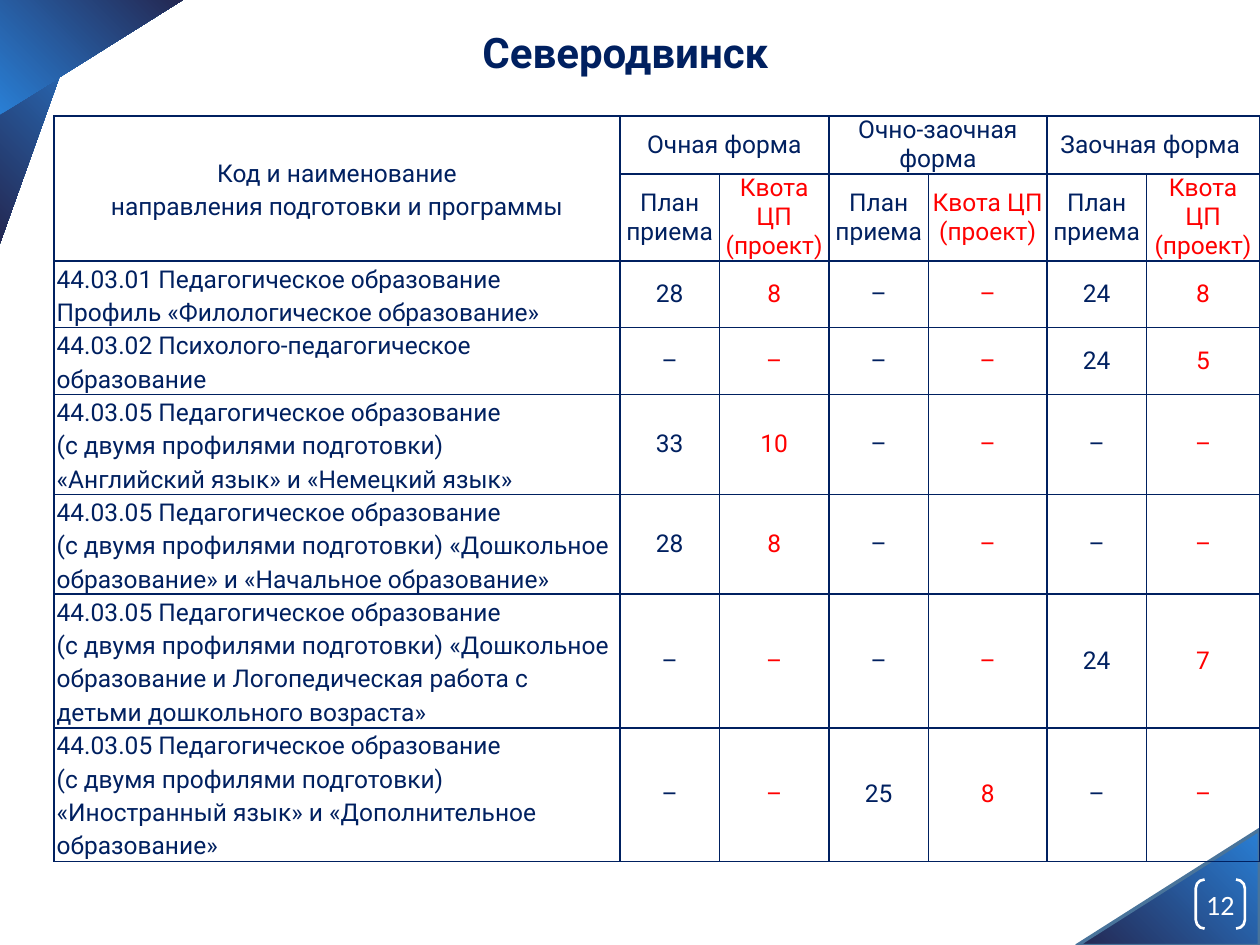
from copy import deepcopy
from lxml.etree import SubElement
from pptx import Presentation
from pptx.dml.color import RGBColor
from pptx.enum.shapes import MSO_SHAPE as Shape
from pptx.enum.text import MSO_ANCHOR as Anchor, MSO_AUTO_SIZE as AutoSize, PP_ALIGN as Align
from pptx.oxml.ns import qn
from pptx.util import Inches, Pt

NAVY, RED, WHITE = "002060", "FF0000", "FFFFFF"


def paint(color_format, color):
    color_format.rgb = RGBColor.from_string(color)


def write(frame, text, size=14, font="Roboto", color=NAVY, bold=False, align=Align.CENTER, spacing=None):
    para = frame.paragraphs[0]
    para.text = text
    para.alignment = align
    para.line_spacing = spacing
    for span in para.runs:
        span.font.size = Pt(size)
        span.font.name = font
        span.font.bold = bold
        paint(span.font.color, color)
    for line_break in para._p.findall(qn("a:br")):
        line_break.append(deepcopy(para.runs[0]._r.rPr))


deck = Presentation()
deck.slide_width, deck.slide_height = Inches(10), Inches(7.5)
page = deck.slides.add_slide(deck.slide_layouts[6])

corners = [
    (8.81, 6.32, 0.92, 1.45, 270, False, True),
    (0, 0, 0.69, 1.93, 180, True, False),
    (0.27, -0.27, 0.91, 1.45, 90, False, False),
]
for left, top, width, height, rotation, flipped, outlined in corners:
    corner = page.shapes.add_shape(
        Shape.RIGHT_TRIANGLE, Inches(left), Inches(top), Inches(width), Inches(height))
    corner.shadow.inherit = False
    corner.rotation = rotation
    if flipped:
        corner._element.spPr.xfrm.set("flipH", "1")
    corner.fill.gradient()
    corner.fill.gradient_angle = 135
    for stop, position, color in zip(corner.fill.gradient_stops, (0, 1), ("297FD5", "242852")):
        stop.position = position
        paint(stop.color, color)
    if outlined:
        paint(corner.line.color, "49749B")
        corner.line.width = Pt(2)
    else:
        corner.line.fill.background()

number = page.shapes.add_shape(
    Shape.DOUBLE_BRACKET, Inches(9.49), Inches(6.98), Inches(0.39), Inches(0.39))
number.shadow.inherit = False
number.adjustments[0] = 0.18
number.fill.background()
paint(number.line.color, WHITE)
number.line.width = Pt(1.5)
frame = number.text_frame
frame.margin_left = frame.margin_right = frame.margin_top = frame.margin_bottom = 0
frame.vertical_anchor = Anchor.MIDDLE
write(frame, "12", size=16, font="Calibri", color=WHITE)

PLAN, QUOTA = "План приема", "Квота ЦП\n(проект)"
TWO_PROFILES = "44.03.05 Педагогическое образование \n(с двумя профилями подготовки) "
rows = [
    ["Код и наименование\nнаправления подготовки и программы",
     "Очная форма", "", "Очно-заочная форма", "", "Заочная форма\u00a0", ""],
    [""] + [PLAN, QUOTA] * 3,
    ["44.03.01 Педагогическое образование \nПрофиль «Филологическое образование»",
     "28", "8", "–", "–", "24", "8"],
    ["44.03.02 Психолого-педагогическое образование", "–", "–", "–", "–", "24", "5"],
    [TWO_PROFILES + "\n«Английский язык» и «Немецкий язык»", "33", "10", "–", "–", "–", "–"],
    [TWO_PROFILES + "«Дошкольное образование» и «Начальное образование»",
     "28", "8", "–", "–", "–", "–"],
    [TWO_PROFILES + "«Дошкольное образование и Логопедическая работа с детьми дошкольного возраста»",
     "–", "–", "–", "–", "24", "7"],
    [TWO_PROFILES + "«Иностранный язык» и «Дополнительное образование»",
     "–", "–", "25", "8", "–", "–"],
]
widths = [4.49, 0.79, 0.87, 0.79, 0.94, 0.79, 0.9]
heights = [0.46, 0.69, 0.53, 0.53, 0.79, 0.79, 1.06, 1.06]
table = page.shapes.add_table(
    len(rows), len(widths), Inches(0.43), Inches(0.92),
    Inches(sum(widths)), Inches(sum(heights))).table
table.first_row = table.horz_banding = False
for column, width in zip(table.columns, widths):
    column.width = Inches(width)
for row, height in zip(table.rows, heights):
    row.height = Inches(height)

for row_index, texts in enumerate(rows):
    for column_index, text in enumerate(texts):
        cell = table.cell(row_index, column_index)
        is_program = column_index == 0 and row_index > 1
        cell.margin_left = cell.margin_right = Inches(0.02)
        cell.margin_top = cell.margin_bottom = 0
        cell.vertical_anchor = Anchor.TOP if is_program else Anchor.MIDDLE
        properties = cell._tc.get_or_add_tcPr()
        for side in ("a:lnL", "a:lnR", "a:lnT", "a:lnB"):
            border = SubElement(properties, qn(side), w=str(Pt(1)))
            solid = SubElement(border, qn("a:solidFill"))
            SubElement(solid, qn("a:srgbClr"), val=NAVY)
        cell.fill.background()
        if text:
            is_quota = row_index > 0 and column_index in (2, 4, 6)
            write(cell.text_frame, text,
                  color=RED if is_quota else NAVY,
                  align=Align.LEFT if is_program else Align.CENTER,
                  spacing=1.15 if column_index == 0 else None)

table.cell(0, 0).merge(table.cell(1, 0))
for column_index in (1, 3, 5):
    table.cell(0, column_index).merge(table.cell(0, column_index + 1))

title = page.shapes.add_textbox(Inches(0.28), Inches(0.16), Inches(9.37), Inches(0.5))
title.text_frame.word_wrap = True
title.text_frame.auto_size = AutoSize.SHAPE_TO_FIT_TEXT
write(title.text_frame, "Северодвинск", size=24, bold=True)

deck.save("out.pptx")
